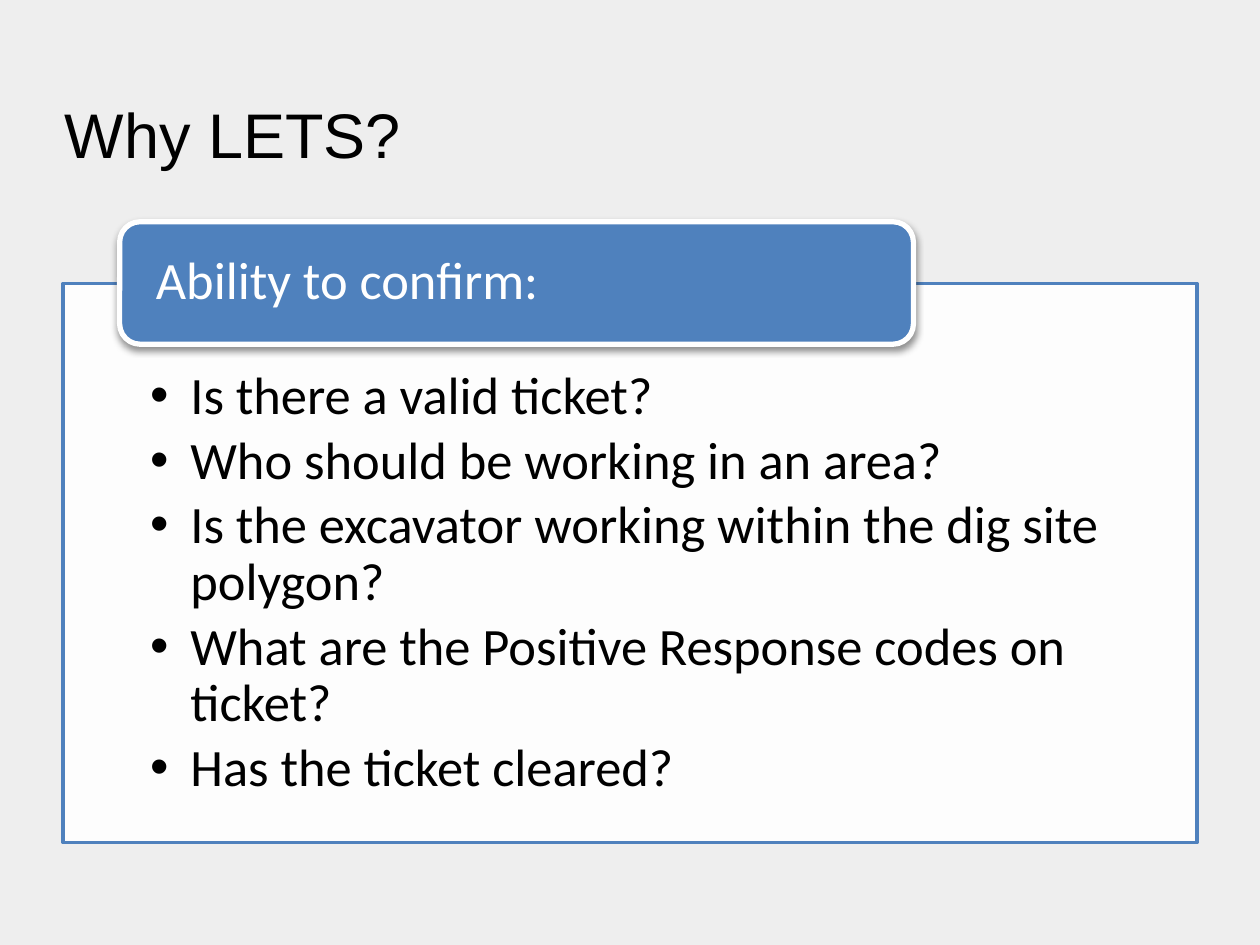
from dataclasses import dataclass

from lxml.etree import SubElement
from pptx import Presentation
from pptx.dml.color import RGBColor
from pptx.enum.shapes import MSO_SHAPE
from pptx.enum.text import MSO_ANCHOR, PP_ALIGN
from pptx.oxml.ns import qn
from pptx.util import Pt


@dataclass(frozen=True)
class Theme:
    background: RGBColor = RGBColor(0xEE, 0xEE, 0xEE)
    accent: RGBColor = RGBColor(0x4F, 0x81, 0xBD)
    light: RGBColor = RGBColor(0xFF, 0xFF, 0xFF)
    dark: RGBColor = RGBColor(0, 0, 0)
    title_font: str = "Arial"
    body_font: str = "Calibri"
    title_size: int = 36
    body_size: int = 30


THEME = Theme()
QUESTIONS = [
    "Is there a valid ticket?",
    "Who should be working in an area?",
    "Is the excavator working within the dig site polygon?",
    "What are the Positive Response codes on ticket?",
    "Has the ticket cleared?",
]


def set_values(target, values):
    for name, value in values.items():
        setattr(target, name, value)


def set_frame(shape, anchor, left, top, right, bottom):
    set_values(shape.text_frame, {
        "word_wrap": True, "vertical_anchor": anchor,
        "margin_left": Pt(left), "margin_top": Pt(top),
        "margin_right": Pt(right), "margin_bottom": Pt(bottom),
    })
    return shape.text_frame


def write(para, text, font, size, color):
    para.alignment = PP_ALIGN.LEFT
    span = para.add_run()
    span.text = text
    set_values(span.font, {"name": font, "size": Pt(size)})
    span.font.color.rgb = color


def add_block(page, kind, box, fill, line, width):
    shape = page.shapes.add_shape(kind, *map(Pt, box))
    shape.shadow.inherit = False
    shape.fill.solid()
    shape.fill.fore_color.rgb = fill
    shape.line.color.rgb = line
    shape.line.width = Pt(width)
    return shape


def add_bullet(para, indent):
    properties = para._p.get_or_add_pPr()
    properties.set("marL", str(Pt(indent)))
    properties.set("indent", str(-Pt(indent)))
    SubElement(properties, qn("a:buFont"), typeface="Arial")
    SubElement(properties, qn("a:buChar"), char="•")


def add_shadow(shape, blur, distance, opacity):
    effects = shape._element.spPr.find(qn("a:effectLst"))
    shadow = SubElement(effects, qn("a:outerShdw"), blurRad=str(Pt(blur)),
                        dist=str(Pt(distance)), dir="5400000", rotWithShape="0")
    color = SubElement(shadow, qn("a:srgbClr"), val=str(THEME.dark))
    SubElement(color, qn("a:alpha"), val=str(opacity * 1000))


def add_title(page, box, text):
    shape = page.shapes.add_textbox(*map(Pt, box))
    frame = set_frame(shape, MSO_ANCHOR.BOTTOM, 7.2, 3.6, 7.2, 3.6)
    write(frame.paragraphs[0], text, THEME.title_font, THEME.title_size, THEME.dark)


def add_question_panel(page, box, questions):
    panel = add_block(page, MSO_SHAPE.RECTANGLE, box, THEME.light, THEME.accent, 2)
    color = panel.fill._xPr.find(qn("a:solidFill"))[0]
    SubElement(color, qn("a:alpha"), val="90000")
    frame = set_frame(panel, MSO_ANCHOR.TOP, 50.3, 49, 50.3, 16.5)
    for index, question in enumerate(questions):
        para = frame.add_paragraph() if index else frame.paragraphs[0]
        set_values(para, {"line_spacing": 0.9, "space_after": Pt(4.5)})
        add_bullet(para, 22.5)
        write(para, question, THEME.body_font, THEME.body_size, THEME.dark)


def add_heading_tab(page, box, text):
    tab = add_block(page, MSO_SHAPE.ROUNDED_RECTANGLE, box, THEME.accent, THEME.light, 3)
    add_shadow(tab, blur=4, distance=2, opacity=43)
    frame = set_frame(tab, MSO_ANCHOR.MIDDLE, 17.3, 0, 17.3, 0)
    para = frame.paragraphs[0]
    para.line_spacing = 0.9
    write(para, text, THEME.body_font, THEME.body_size, THEME.light)


def main():
    deck = Presentation()
    deck.slide_width, deck.slide_height = Pt(720), Pt(540)
    page = deck.slides.add_slide(deck.slide_layouts[6])
    page.background.fill.solid()
    page.background.fill.fore_color.rgb = THEME.background

    # Title
    add_title(page, (30, 24, 654, 77.5), "Why LETS?")
    # Questions, with the heading tab over the panel's top edge
    add_question_panel(page, (36, 162, 648, 319.5), QUESTIONS)
    add_heading_tab(page, (68.4, 126.7, 453.6, 70), "Ability to confirm:")

    deck.save("out.pptx")


if __name__ == "__main__":
    main()
